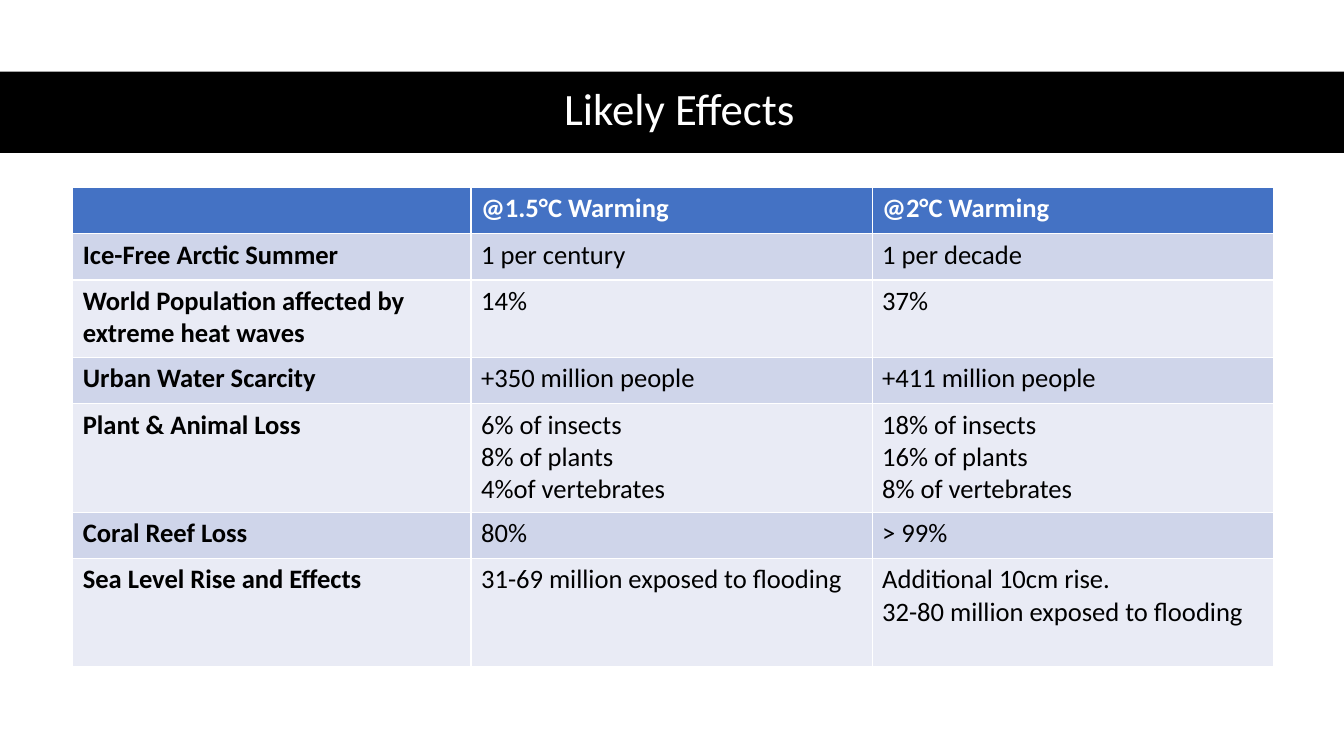
from dataclasses import dataclass
from pptx import Presentation
from pptx.dml.color import RGBColor
from pptx.enum.shapes import MSO_SHAPE
from pptx.enum.text import MSO_ANCHOR, PP_ALIGN
from pptx.util import Pt


@dataclass(frozen=True)
class Theme:
    font: str = "Calibri"
    black: str = "000000"
    white: str = "FFFFFF"
    head: str = "4472C4"
    bands: tuple = ("E9EBF5", "CFD5EA")
    title: int = 32
    body: int = 19


theme = Theme()


def paint(fill, color):
    fill.solid()
    fill.fore_color.rgb = RGBColor.from_string(color)


def style(frame, size, color, bold=False):
    for line in frame.paragraphs:
        for run in line.runs:
            run.font.name = theme.font
            run.font.size = Pt(size)
            run.font.bold = bold
            run.font.color.rgb = RGBColor.from_string(color)


deck = Presentation()
deck.slide_width, deck.slide_height = Pt(960), Pt(540)
slide = deck.slides.add_slide(deck.slide_layouts[6])

# Title band
band = slide.shapes.add_shape(MSO_SHAPE.RECTANGLE, Pt(0), Pt(51.2), Pt(960), Pt(58))
band.shadow.inherit = False
band.line.fill.background()
paint(band.fill, theme.black)

# Title
title = slide.shapes.add_textbox(Pt(44), Pt(50.5), Pt(882.5), Pt(58)).text_frame
title.word_wrap = True
title.vertical_anchor = MSO_ANCHOR.MIDDLE
title.text = "Likely Effects"
title.paragraphs[0].alignment = PP_ALIGN.CENTER
title.paragraphs[0].line_spacing = 0.9
style(title, theme.title, theme.white)

# Table content: row height, then the three cells
rows = [
    (33, "", "@1.5°C Warming", "@2°C Warming"),
    (33, "Ice-Free Arctic Summer", "1 per century", "1 per decade"),
    (55.5, "World Population affected by extreme heat waves", "14%", "37%"),
    (33, "Urban Water Scarcity", "+350 million people", "+411 million people"),
    (77.5, "Plant & Animal Loss",
     "6% of insects\n8% of plants\n4%of vertebrates",
     "18% of insects\n16% of plants\n8% of vertebrates"),
    (33, "Coral Reef Loss", "80%", "> 99%"),
    (77.5, "Sea Level Rise and Effects", "31-69 million exposed to flooding",
     "Additional 10cm rise.\n32-80 million exposed to flooding"),
]
widths = (284.5, 286.5, 286.5)

# Effects table
high = sum(row[0] for row in rows)
grid = slide.shapes.add_table(len(rows), len(widths), Pt(52), Pt(134),
                              Pt(sum(widths)), Pt(high)).table
for col, width in zip(grid.columns, widths):
    col.width = Pt(width)

for r, (height, *texts) in enumerate(rows):
    grid.rows[r].height = Pt(height)
    for c, text in enumerate(texts):
        cell = grid.cell(r, c)
        paint(cell.fill, theme.bands[r % 2] if r else theme.head)
        cell.text_frame.text = text
        style(cell.text_frame, theme.body, theme.black if r else theme.white,
              r == 0 or c == 0)

deck.save("out.pptx")
